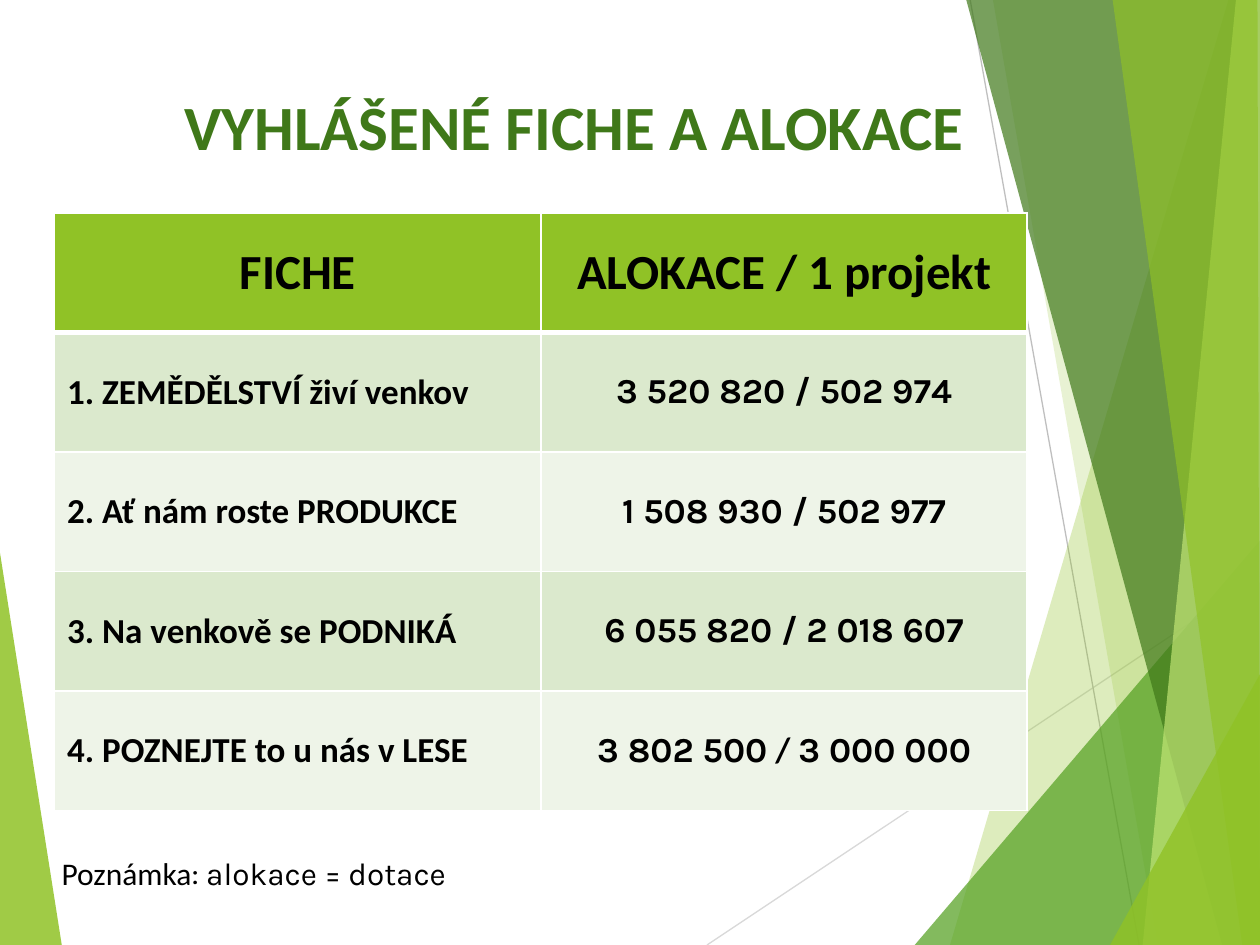
from dataclasses import dataclass

from lxml.etree import SubElement
from pptx import Presentation
from pptx.dml.color import RGBColor
from pptx.enum.shapes import MSO_CONNECTOR as Connector
from pptx.enum.text import MSO_ANCHOR as Anchor, PP_ALIGN as Align
from pptx.oxml.ns import qn
from pptx.util import Pt

WIDTH, HEIGHT = 720, 540


@dataclass(frozen=True)
class Theme:
    """Hold the colours, fonts and type sizes of the slide."""
    lime: str = "90C226"
    green: str = "54A021"
    forest: str = "3F7819"
    pale: str = "C0E474"
    ink: str = "000000"
    white: str = "FFFFFF"
    bands: tuple = ("DBE9CD", "EEF4E8")
    rays: tuple = ("D9D9D9", "BFBFBF")
    main_font: str = "Calibri"
    figure_font: str = "Karla"
    title: int = 36
    header: int = 28
    body: int = 20
    note: int = 18


THEME = Theme()


def write_text(frame, *pieces, size, color=THEME.ink, bold=False, align=Align.LEFT, anchor=Anchor.MIDDLE):
    """Fill a text frame with one paragraph of (text, font) pieces."""
    frame.word_wrap = True
    frame.vertical_anchor = anchor
    para = frame.paragraphs[0]
    para.alignment = align
    for text, font in pieces:
        span = para.add_run()
        span.text = text
        span.font.name = font
        span.font.size = Pt(size)
        span.font.bold = bold
        span.font.color.rgb = RGBColor.from_string(color)


def add_text(page, left, top, width, height, *pieces, **style):
    """Add a text box holding the pieces."""
    box = page.shapes.add_textbox(Pt(left), Pt(top), Pt(width), Pt(height))
    write_text(box.text_frame, *pieces, **style)


def add_facet(page, points, color, opacity):
    """Add a translucent polygon through the points."""
    corners = [(Pt(x), Pt(y)) for x, y in points]
    builder = page.shapes.build_freeform(*corners[0])
    builder.add_line_segments(corners[1:], close=True)
    shape = builder.convert_to_shape()
    shape.shadow.inherit = False
    shape.line.fill.background()
    shape.fill.solid()
    shape.fill.fore_color.rgb = RGBColor.from_string(color)
    tint = shape.element.spPr.find(f"{qn('a:solidFill')}/{qn('a:srgbClr')}")
    SubElement(tint, qn("a:alpha"), val=str(opacity * 1000))


def add_band(page, top, bottom, color, opacity, right=WIDTH):
    """Add a facet from a slanted left edge to the right side of the page."""
    points = [(top, 0), (bottom, HEIGHT), (WIDTH, HEIGHT), (right, 0)]
    add_facet(page, points, color, opacity)


def add_corner(page, left, top, color, opacity):
    """Add a triangular facet in the bottom right corner."""
    add_facet(page, [(left, HEIGHT), (WIDTH, top), (WIDTH, HEIGHT)], color, opacity)


def add_ray(page, start, end, color):
    """Add a thin straight line."""
    ray = page.shapes.add_connector(Connector.STRAIGHT, *map(Pt, start + end))
    ray.line.width = Pt(0.75)
    ray.line.color.rgb = RGBColor.from_string(color)
    SubElement(ray.element.spPr, qn("a:effectLst"))


def set_borders(cell, top, bottom):
    """Give a cell white borders, with its own top and bottom widths."""
    properties = cell._tc.get_or_add_tcPr()
    widths = {"lnL": 1, "lnR": 1, "lnT": top, "lnB": bottom}
    for index, (side, width) in enumerate(widths.items()):
        edge = SubElement(properties, qn(f"a:{side}"), w=str(Pt(width)))
        fill = SubElement(edge, qn("a:solidFill"))
        SubElement(fill, qn("a:srgbClr"), val=THEME.white)
        properties.insert(index, edge)


def add_grid(page, left, top, width, height, rows):
    """Add the table with a lime header and alternating body rows."""
    frame = page.shapes.add_table(len(rows), len(rows[0]), Pt(left), Pt(top), Pt(width), Pt(height))
    for row, contents in enumerate(rows):
        fill = THEME.bands[(row - 1) % 2] if row else THEME.lime
        for column, pieces in enumerate(contents):
            cell = frame.table.cell(row, column)
            cell.fill.solid()
            cell.fill.fore_color.rgb = RGBColor.from_string(fill)
            set_borders(cell, 3 if row == 1 else 1, 1 if row else 3)
            cell.vertical_anchor = Anchor.MIDDLE
            write_text(
                cell.text_frame, *pieces, bold=True, anchor=None,
                size=THEME.body if row else THEME.header,
                align=Align.LEFT if row and column == 0 else Align.CENTER,
            )


def add_backdrop(page):
    """Draw the green facets and the thin rays."""
    add_facet(page, [(0, 316), (35.3, HEIGHT), (0, HEIGHT)], THEME.lime, 85)
    add_ray(page, (404, HEIGHT), (WIDTH, 329.4), THEME.rays[0])
    add_ray(page, (554.4, 0), (650.9, HEIGHT), THEME.rays[1])
    add_band(page, 702, 542.9, THEME.lime, 30)
    add_band(page, 567.4, 661.7, THEME.lime, 20)
    add_corner(page, 522.7, 308.9, THEME.green, 72)
    add_band(page, 552.2, 698.4, THEME.forest, 70)
    add_band(page, 706.3, 653, THEME.pale, 70)
    add_band(page, 635.8, 709.9, THEME.lime, 65, right=718.6)
    add_corner(page, 634.3, 385.2, THEME.lime, 80)


def main():
    """Build the slide and save it."""
    deck = Presentation()
    deck.slide_width, deck.slide_height = Pt(WIDTH), Pt(HEIGHT)
    page = deck.slides.add_slide(deck.slide_layouts[6])
    add_backdrop(page)
    main_font, figure_font = THEME.main_font, THEME.figure_font
    add_text(
        page, 36, 43.2, 584.6, 56.9, ("VYHLÁŠENÉ FICHE A ALOKACE", main_font),
        size=THEME.title, color=THEME.forest, bold=True, align=Align.CENTER,
    )
    allocations = [
        ("1. ZEMĚDĚLSTVÍ živí venkov", [("3 520 820 / 502 974", figure_font)]),
        ("2. Ať nám roste PRODUKCE", [("1 508 930 / 502 977", figure_font)]),
        ("3. Na venkově se PODNIKÁ", [("6 055 820 / 2 018 607", figure_font)]),
        ("4. POZNEJTE to u nás v LESE",
         [("3 802 500", figure_font), (" / ", main_font), ("3 000 000", figure_font)]),
    ]
    rows = [("FICHE", [("ALOKACE / 1 projekt", main_font)])] + allocations
    grid = [([(name, main_font)], amount) for name, amount in rows]
    add_grid(page, 31.2, 121.6, 555.8, 341.5, grid)
    add_text(
        page, 28.1, 484.6, 250.6, 29, ("Poznámka", main_font),
        (": alokace = dotace", figure_font), size=THEME.note, anchor=Anchor.TOP,
    )
    deck.save("out.pptx")


if __name__ == "__main__":
    main()
